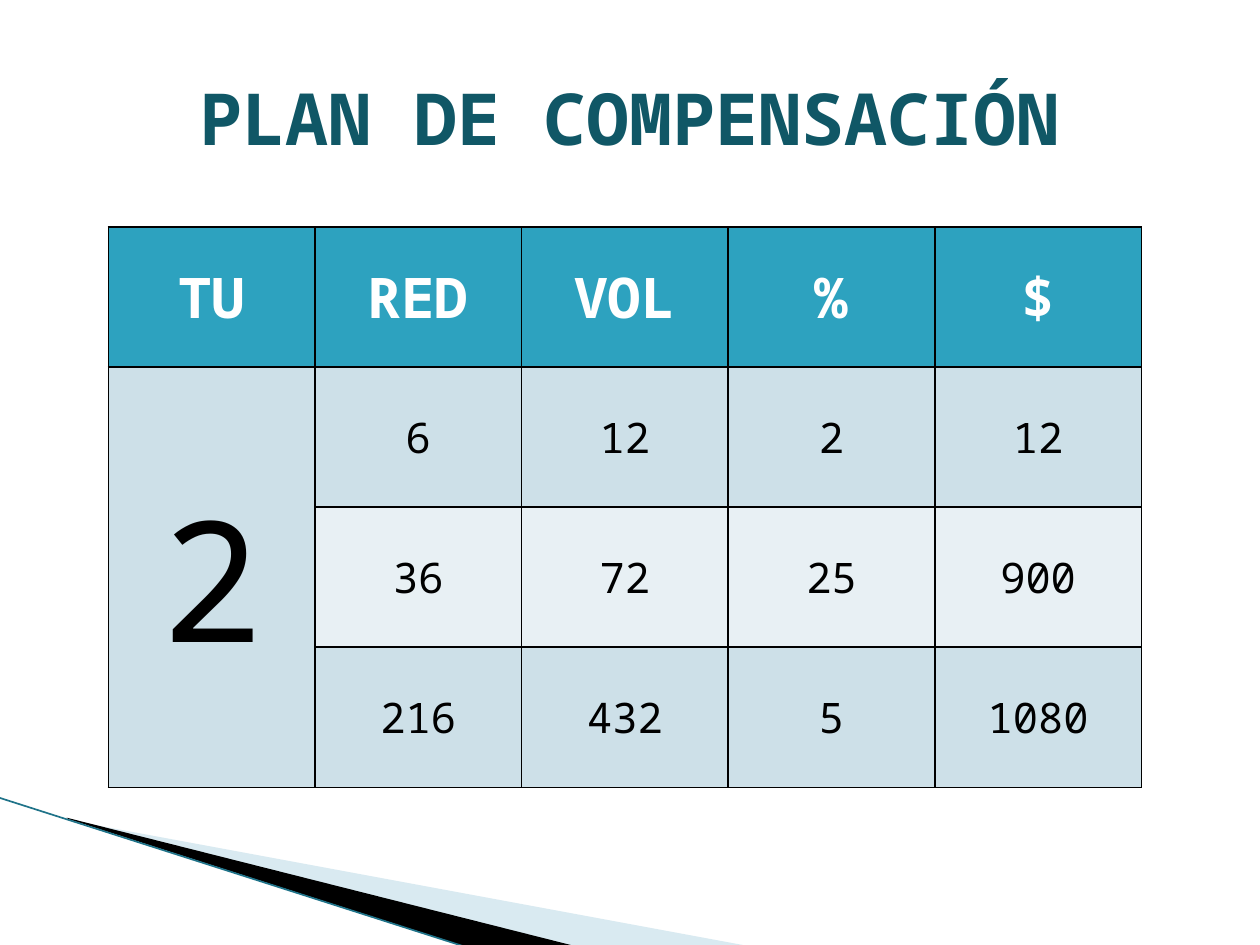
import pptx
import pptx.dml.color
import pptx.enum.shapes
import pptx.enum.text
import pptx.oxml
import pptx.oxml.ns
import pptx.util
from lxml import etree

PX = 9144
FONT = "Noto Sans Mono"
HEADERS = ["TU", "RED", "VOL", "%", "$"]
ROWS = [
    ["2", "6", "12", "2", "12"],
    ["", "36", "72", "25", "900"],
    ["", "216", "432", "5", "1080"],
]


def px(length):
    return pptx.util.Emu(round(length * PX))


def color(value):
    return pptx.dml.color.RGBColor.from_string(value)


def style(paragraph, size, value, bold=False):
    paragraph.alignment = pptx.enum.text.PP_ALIGN.CENTER
    paragraph.font.name = FONT
    paragraph.font.size = pptx.util.Pt(size)
    paragraph.font.bold = bold
    paragraph.font.color.rgb = color(value)


def set_frame(shape, box):
    left, top, width, height = map(px, box)
    shift_x = round((shape.left - left) / PX)
    shift_y = round((shape.top - top) / PX)
    for outline in shape._element.xpath(".//a:pathLst/*"):
        outline.set("w", str(box[2]))
        outline.set("h", str(box[3]))
        for point in outline.iter(pptx.oxml.ns.qn("a:pt")):
            point.set("x", str(int(point.get("x")) + shift_x))
            point.set("y", str(int(point.get("y")) + shift_y))
    shape.left, shape.top, shape.width, shape.height = left, top, width, height


def add_wedge(slide, box, frame, points, fill, opacity=100):
    left, top = box[:2]
    corners = [(left + x, top + y) for x, y in points]
    builder = slide.shapes.build_freeform(*corners[0], scale=PX)
    builder.add_line_segments(corners[1:], close=True)
    shape = builder.convert_to_shape()
    set_frame(shape, (left + frame[0], top + frame[1], frame[2], frame[3]))
    shape.shadow.inherit = False
    shape.fill.solid()
    shape.fill.fore_color.rgb = color(fill)
    shape.line.fill.background()
    if opacity < 100:
        fill_color = shape.fill._xPr.find(".//" + pptx.oxml.ns.qn("a:srgbClr"))
        alpha = etree.SubElement(fill_color, pptx.oxml.ns.qn("a:alpha"))
        alpha.set("val", str(opacity * 1000))


def add_corner(slide, box):
    left, top, width, height = box
    add_wedge(slide, box, (78, -86, 416, 158),
              [(55, 18), (595, 118), (456, 118), (55, 17)], "A0CBDC", 40)
    add_wedge(slide, box, (-6, 0, 416, 92),
              [(53, 16), (457, 118), (372, 119), (54, 17)], "000000")
    line = slide.shapes.add_connector(
        pptx.enum.shapes.MSO_CONNECTOR.STRAIGHT,
        px(left - 1), px(top), px(left + 371), px(top + height),
    )
    line.line.color.rgb = color("1F7389")
    line.line.width = pptx.util.Pt(0.95)
    etree.SubElement(line._element.spPr, pptx.oxml.ns.qn("a:effectLst"))


def place_title(slide, box, text):
    title = slide.shapes.title
    title.left, title.top, title.width, title.height = map(px, box)
    title.text_frame.text = text
    title.text_frame.word_wrap = True
    title.text_frame.vertical_anchor = pptx.enum.text.MSO_ANCHOR.MIDDLE
    style(title.text_frame.paragraphs[0], 41, "105766", True)


def add_borders(cell):
    properties = cell._tc.get_or_add_tcPr()
    for index, side in enumerate(("lnL", "lnR", "lnT", "lnB")):
        border = pptx.oxml.parse_xml(
            f'<a:{side} {pptx.oxml.ns.nsdecls("a")} w="12700">'
            '<a:solidFill><a:srgbClr val="000000"/></a:solidFill>'
            f'</a:{side}>'
        )
        properties.insert(index, border)


def format_cell(cell, text, size, text_color, fill, bold):
    cell.text = text
    cell.vertical_anchor = pptx.enum.text.MSO_ANCHOR.MIDDLE
    cell.fill.solid()
    cell.fill.fore_color.rgb = color(fill)
    style(cell.text_frame.paragraphs[0], size, text_color, bold)
    add_borders(cell)


def add_plan_table(slide, box):
    rows = [HEADERS] + ROWS
    table = slide.shapes.add_table(len(rows), len(HEADERS), *map(px, box)).table
    for column in table.columns:
        column.width = px(box[2] / len(HEADERS))
    for row in table.rows:
        row.height = px(box[3] / len(rows))
    for row_index, values in enumerate(rows):
        band = "CDE0E8" if row_index % 2 else "E8F0F4"
        for column_index, text in enumerate(values):
            cell = table.cell(row_index, column_index)
            if row_index == 0:
                format_cell(cell, text, 32, "FFFFFF", "2DA2BF", True)
            elif column_index == 0:
                format_cell(cell, text, 96 if text else 24, "000000", "CDE0E8", False)
            else:
                format_cell(cell, text, 24, "000000", band, False)
    table.cell(1, 0).merge(table.cell(len(ROWS), 0))


def main():
    presentation = pptx.Presentation()
    presentation.slide_width = px(1000)
    presentation.slide_height = px(750)
    slide = presentation.slides.add_slide(presentation.slide_layouts[5])
    add_corner(slide, (0, 633, 595, 119))
    place_title(slide, (50, 30, 900, 125), "PLAN DE COMPENSACIÓN")
    add_plan_table(slide, (86, 180, 820, 445))
    presentation.save("out.pptx")


if __name__ == "__main__":
    main()
